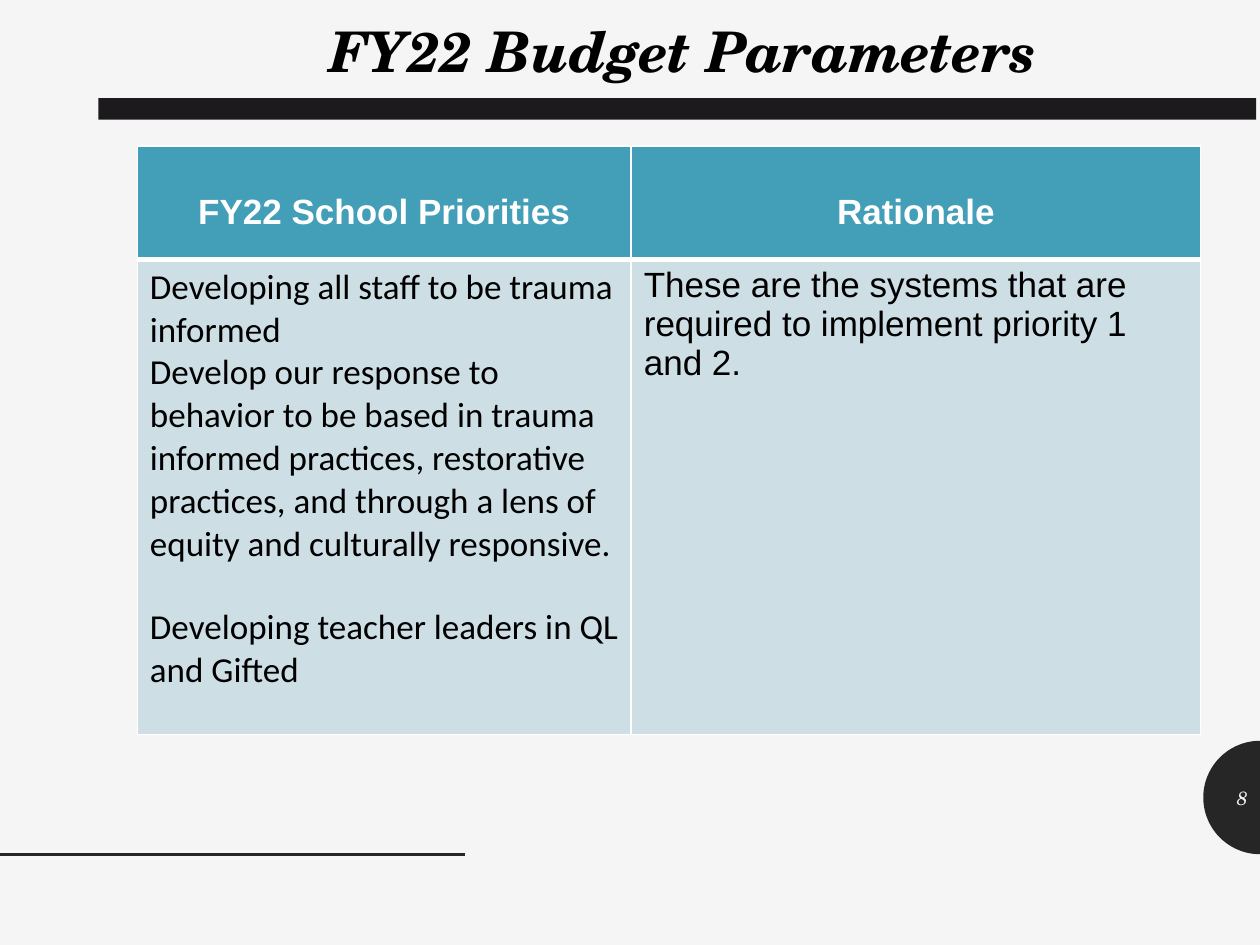
from math import cos, pi, sin

from lxml.etree import SubElement
from pptx import Presentation
from pptx.dml.color import RGBColor
from pptx.enum.shapes import MSO_CONNECTOR, MSO_SHAPE
from pptx.enum.text import MSO_ANCHOR, PP_ALIGN
from pptx.oxml.ns import qn
from pptx.util import Inches, Pt

BLACK = RGBColor(0x00, 0x00, 0x00)
WHITE = RGBColor(0xFF, 0xFF, 0xFF)
PAPER = RGBColor(0xF5, 0xF5, 0xF5)
CHARCOAL = RGBColor(0x26, 0x26, 0x26)
BAR = RGBColor(0x1D, 0x1A, 0x1D)
TEAL = RGBColor(0x43, 0x9E, 0xB7)
PALE = RGBColor(0xCD, 0xDE, 0xE5)

TITLE = "FY22 Budget Parameters"
PAGE = "8"
HEADERS = ["FY22 School Priorities", "Rationale"]
PRIORITIES = [
    "Developing all staff to be trauma informed",
    "Develop our response to behavior to be based in trauma informed practices, "
    "restorative practices, and through a lens of equity and culturally responsive.",
    "Developing teacher leaders in QL and Gifted",
]
RATIONALE = ["These are the systems that are required to implement priority 1 and 2."]

WIDTH, HEIGHT = 10, 7.5
COLUMNS = [3.92, 4.52]
ROWS = [0.9, 3.77]
LINE_GAP = Pt(23)
DISC_RADIUS, DISC_MIDDLE = 0.45, 6.33

TITLE_FONT = dict(name="TeX Gyre Schola", size=Pt(32), bold=True, italic=True)
PAGE_FONT = dict(name="TeX Gyre Schola", size=Pt(11), italic=True)
HEADER_FONT = dict(name="Arial", size=Pt(20), bold=True)
PRIORITY_FONT = dict(name="Calibri", size=Pt(20), bold=False)
RATIONALE_FONT = dict(name="Arial", size=Pt(20), bold=False)


def write(tf, lines, font, color, align=PP_ALIGN.LEFT):
    tf.word_wrap = True
    for i, line in enumerate(lines):
        p = tf.paragraphs[0] if i == 0 else tf.add_paragraph()
        p.alignment = align
        r = p.add_run()
        r.text = line
        for key, value in font.items():
            setattr(r.font, key, value)
        r.font.color.rgb = color


def add_text(s, box, text, font, color, align, anchor):
    tf = s.shapes.add_textbox(*map(Inches, box)).text_frame
    tf.vertical_anchor = anchor
    write(tf, [text], font, color, align)


def paint(shape, color):
    shape.shadow.inherit = False
    shape.fill.solid()
    shape.fill.fore_color.rgb = color
    shape.line.fill.background()


def set_borders(cell, **widths):
    """Give the cell white borders; widths are points by side, 1 by default."""
    tcPr = cell._tc.get_or_add_tcPr()
    for i, side in enumerate("LRTB"):
        ln = SubElement(tcPr, qn(f"a:ln{side}"), w=str(Pt(widths.get(side, 1))))
        fill = SubElement(ln, qn("a:solidFill"))
        SubElement(fill, qn("a:srgbClr"), val=str(WHITE))
        tcPr.insert(i, ln)


def add_page_disc(s):
    steps = 48
    arc = [(WIDTH - DISC_RADIUS * sin(pi * i / steps),
            DISC_MIDDLE - DISC_RADIUS * cos(pi * i / steps)) for i in range(steps + 1)]
    points = [(Inches(x), Inches(y)) for x, y in arc]
    builder = s.shapes.build_freeform(*points[0])
    builder.add_line_segments(points[1:], close=True)
    paint(builder.convert_to_shape(), CHARCOAL)


def add_priorities_table(s):
    box = (1.09, 1.16, sum(COLUMNS), sum(ROWS))
    table = s.shapes.add_table(len(ROWS), len(COLUMNS), *map(Inches, box)).table
    for column, width in zip(table.columns, COLUMNS):
        column.width = Inches(width)
    for row, height in zip(table.rows, ROWS):
        row.height = Inches(height)
    bodies = [(PRIORITIES, PRIORITY_FONT), (RATIONALE, RATIONALE_FONT)]
    for c, (header, (lines, font)) in enumerate(zip(HEADERS, bodies)):
        head, body = table.cell(0, c), table.cell(1, c)
        for cell, color in ((head, TEAL), (body, PALE)):
            cell.fill.solid()
            cell.fill.fore_color.rgb = color
        set_borders(head, B=3)
        set_borders(body, T=3)
        head.margin_top = Inches(0.05) + LINE_GAP
        write(head.text_frame, [header], HEADER_FONT, WHITE, PP_ALIGN.CENTER)
        write(body.text_frame, lines, font, BLACK)
    table.cell(1, 0).text_frame.paragraphs[-1].space_before = LINE_GAP


def main():
    prs = Presentation()
    prs.slide_width, prs.slide_height = Inches(WIDTH), Inches(HEIGHT)
    s = prs.slides.add_slide(prs.slide_layouts[6])
    s.background.fill.solid()
    s.background.fill.fore_color.rgb = PAPER

    add_page_disc(s)
    rule = s.shapes.add_connector(
        MSO_CONNECTOR.STRAIGHT, *map(Inches, (0, 6.78, 3.69, 6.78)))
    rule.line.color.rgb = CHARCOAL
    rule.line.width = Pt(2)
    SubElement(rule._element.spPr, qn("a:effectLst"))

    bar = s.shapes.add_shape(MSO_SHAPE.RECTANGLE, *map(Inches, (0.78, 0.78, 9.19, 0.17)))
    paint(bar, BAR)
    add_text(s, (0.96, 0.08, 8.93, 0.64), TITLE, TITLE_FONT, BLACK,
             PP_ALIGN.CENTER, MSO_ANCHOR.TOP)
    add_priorities_table(s)
    add_text(s, (WIDTH - DISC_RADIUS, DISC_MIDDLE - 0.2, DISC_RADIUS, 0.4), PAGE,
             PAGE_FONT, PAPER, PP_ALIGN.RIGHT, MSO_ANCHOR.MIDDLE)
    prs.save("out.pptx")


if __name__ == "__main__":
    main()
